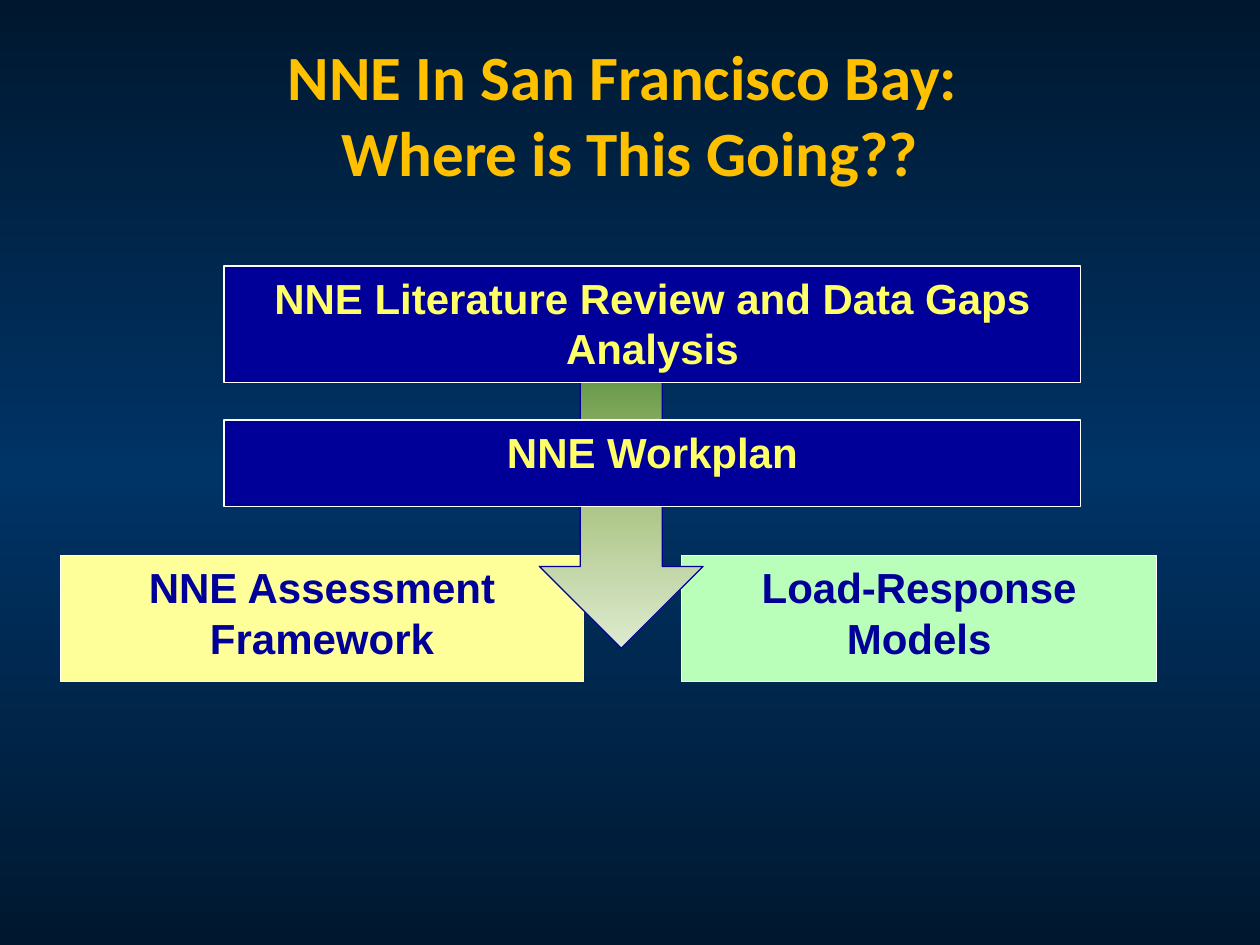
"""Build the slide on where the NNE work in San Francisco Bay is going."""
from copy import deepcopy

from pptx import Presentation
from pptx.dml.color import RGBColor
from pptx.enum.shapes import MSO_SHAPE
from pptx.enum.text import MSO_ANCHOR, PP_ALIGN
from pptx.util import Pt


def write(shape, text, font="Arial", size=24, color="000099", anchor=MSO_ANCHOR.TOP):
    frame = shape.text_frame
    frame.word_wrap = True
    frame.vertical_anchor = anchor
    paragraph = frame.paragraphs[0]
    paragraph.text = text
    paragraph.alignment = PP_ALIGN.CENTER
    for run in paragraph.runs:
        run.font.name = font
        run.font.size = Pt(size)
        run.font.bold = True
        run.font.color.rgb = RGBColor.from_string(color)


def blend(fill, colors, angle):
    fill.gradient()
    fill.gradient_angle = angle
    first = fill.gradient_stops[0]._gs
    first.addnext(deepcopy(first))
    for stop, color, position in zip(fill.gradient_stops, colors, (0, 0.5, 1)):
        stop.color.rgb = RGBColor.from_string(color)
        stop.position = position


deck = Presentation()
deck.slide_width, deck.slide_height = Pt(720), Pt(540)
slide = deck.slides.add_slide(deck.slide_layouts[5])
blend(slide.background.fill, ("00182F", "003366", "00182F"), 270)

title = slide.shapes.title
title.left, title.top, title.width, title.height = Pt(18), Pt(19.7), Pt(684), Pt(90)
write(title, "NNE In San Francisco Bay: \vWhere is This Going??",
      font="Calibri", size=36, color="FFC000", anchor=MSO_ANCHOR.MIDDLE)

steps = [
    (MSO_SHAPE.RECTANGLE, 34.5, 317.5, 299, 72, "FFFF99", "000099", "NNE Assessment Framework"),
    (MSO_SHAPE.RECTANGLE, 389.5, 317.5, 271.5, 72, "B9FFB9", "000099", "Load-Response Models"),
    (MSO_SHAPE.DOWN_ARROW, 308.2, 152, 93.6, 218.5, None, None, None),
    (MSO_SHAPE.RECTANGLE, 128, 240, 489.6, 49.5, "000099", "FFFF66", "NNE Workplan"),
    (MSO_SHAPE.RECTANGLE, 128, 152, 489.6, 66.5, "000099", "FFFF66",
     "NNE Literature Review and Data Gaps Analysis"),
]
for kind, left, top, width, height, back, ink, label in steps:
    step = slide.shapes.add_shape(kind, Pt(left), Pt(top), Pt(width), Pt(height))
    step.shadow.inherit = False
    step.line.width = Pt(0.75)
    step.line.color.rgb = RGBColor.from_string("FFFFFF" if label else "000099")
    if label:
        step.fill.solid()
        step.fill.fore_color.rgb = RGBColor.from_string(back)
        write(step, label, color=ink)
    else:
        blend(step.fill, ("DDEBCF", "9CB86E", "156B13"), 90)

deck.save("out.pptx")
